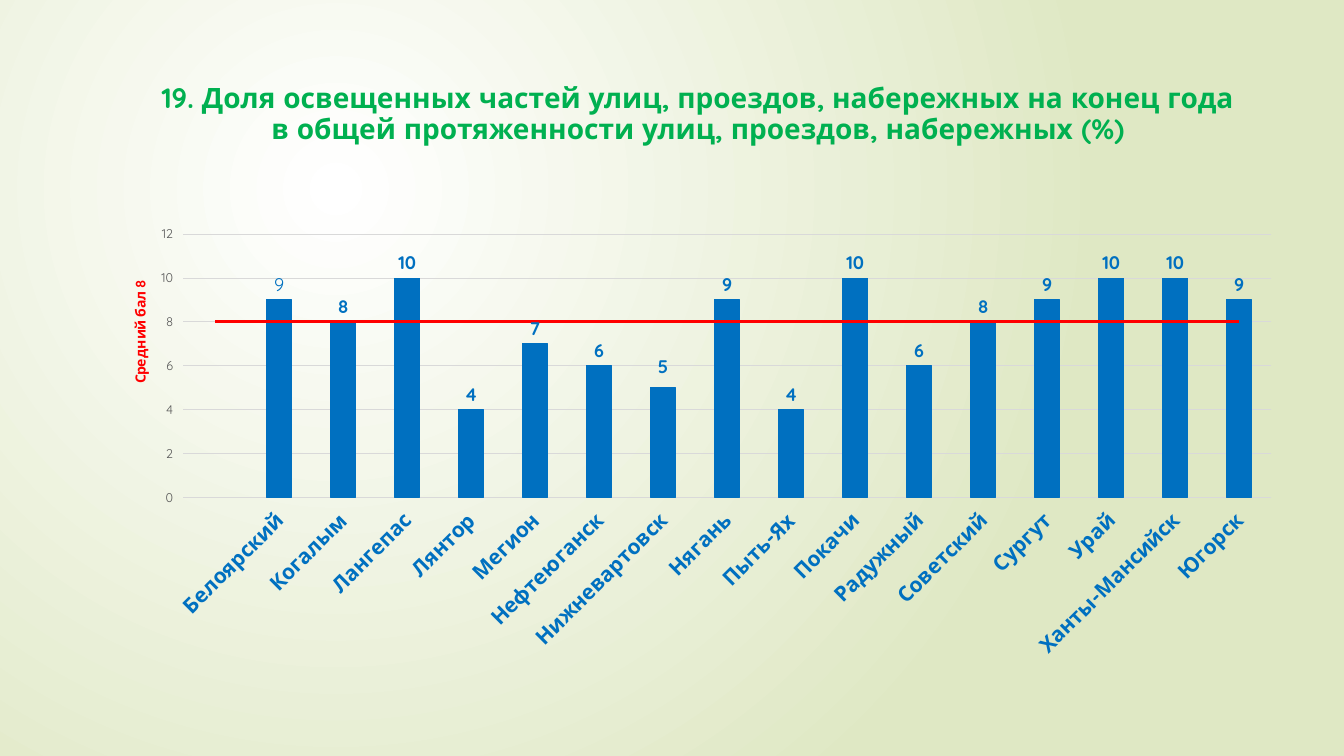
from lxml.etree import SubElement
from pptx import Presentation
from pptx.chart.data import CategoryChartData
from pptx.dml.color import RGBColor
from pptx.enum.chart import XL_CHART_TYPE as ChartType, XL_LABEL_POSITION as LabelPos
from pptx.enum.chart import XL_MARKER_STYLE as MarkerStyle
from pptx.enum.text import MSO_ANCHOR as Anchor, PP_ALIGN as Align
from pptx.oxml import parse_xml
from pptx.oxml.ns import nsdecls, qn
from pptx.util import Inches, Pt

WHITE = RGBColor(0xFF, 0xFF, 0xFF)
PALE_GREEN = RGBColor(0xDF, 0xE8, 0xC4)
GREEN = RGBColor(0x00, 0xB0, 0x50)
BLUE = RGBColor(0x00, 0x70, 0xC0)
RED = RGBColor(0xFF, 0x00, 0x00)
BLACK = RGBColor(0x00, 0x00, 0x00)
GREY = RGBColor(0x59, 0x59, 0x59)
GRID_GREY = RGBColor(0xD9, 0xD9, 0xD9)

TITLE = ["19. Доля освещенных частей улиц, проездов, набережных на конец года",
         "в общей протяженности улиц, проездов, набережных (%)"]
AVERAGE = 8
SCORES = {
    "": None, "Белоярский": 9, "Когалым": 8, "Лангепас": 10, "Лянтор": 4,
    "Мегион": 7, "Нефтеюганск": 6, "Нижневартовск": 5, "Нягань": 9,
    "Пыть-Ях": 4, "Покачи": 10, "Радужный": 6, "Советский": 8, "Сургут": 9,
    "Урай": 10, "Ханты-Мансийск": 10, "Югорск": 9,
}


def manual_layout(x, y, w=None, h=None):
    """Chart layout in fractions of the chart; with a size it is the inner plot."""
    layout = parse_xml(f"<c:layout {nsdecls('c')}><c:manualLayout/></c:layout>")
    settings = {"xMode": "edge", "yMode": "edge", "x": x, "y": y, "w": w, "h": h}
    if w:
        settings = {"layoutTarget": "inner", **settings}
    for tag, value in settings.items():
        if value is not None:
            SubElement(layout[0], qn(f"c:{tag}")).set("val", str(value))
    return layout


class ScoreSlide:
    face = "Quicksand"

    def __init__(self, slide):
        self.slide = slide

    def style(self, font, size, color, bold=False):
        font.name, font.size, font.bold = self.face, Pt(size), bold
        font.color.rgb = color

    def background(self, inner, outer):
        fill = self.slide.background.fill
        fill.gradient()
        for stop, color in zip(fill.gradient_stops, (inner, outer)):
            stop.color.rgb = color
        gradient = self.slide.element.find(f".//{qn('a:gradFill')}")
        circle = parse_xml(
            f'<a:path {nsdecls("a")} path="circle">'
            '<a:fillToRect l="50000" t="50000" r="100000" b="100000"/></a:path>')
        gradient.replace(gradient.find(qn("a:lin")), circle)

    def title(self, lines, left, top, width, height):
        box = self.slide.shapes.add_textbox(
            Inches(left), Inches(top), Inches(width), Inches(height))
        frame = box.text_frame
        frame.word_wrap, frame.vertical_anchor = True, Anchor.BOTTOM
        heading = frame.paragraphs[0]
        heading.alignment, heading.line_spacing = Align.CENTER, 0.9
        for number, line in enumerate(lines):
            if number:
                heading.add_line_break()
            run = heading.add_run()
            run.text = line
            self.style(run.font, 20, GREEN, True)

    def score_chart(self, scores, average, left, top, width, height):
        data = CategoryChartData()
        data.categories = list(scores)
        data.add_series("Series 1", list(scores.values()))
        data.add_series("Series 2", [average] * len(scores))
        chart = self.slide.shapes.add_chart(
            ChartType.COLUMN_CLUSTERED, Inches(left), Inches(top),
            Inches(width), Inches(height), data).chart
        chart.has_title = chart.has_legend = False
        self.style(chart.font, 10, BLACK)
        self.bars(chart.plots[0])
        self.axes(chart, f"Средний бал {average}")
        self.average_line(chart)
        plot_area = chart.plots[0]._element.getparent()
        for old in plot_area.findall(qn("c:layout")):
            plot_area.remove(old)
        plot_area.insert(0, manual_layout(0.063, 0.045, 0.924, 0.578))

    def bars(self, plot):
        plot.gap_width, plot.vary_by_categories = 150, False
        bars = plot.series[0]
        bars.format.fill.solid()
        bars.format.fill.fore_color.rgb = BLUE
        bars.format.line.color.rgb = BLUE
        bars.format.line.width = Pt(0.75)
        labels = bars.data_labels
        labels.show_value, labels.position = True, LabelPos.OUTSIDE_END
        self.style(labels.font, 13, BLUE, True)

        # The first label is typed by hand in a regular weight
        first = bars.points[1].data_label
        run = first.text_frame.paragraphs[0].add_run()
        run.text = "9"
        self.style(run.font, 13, BLUE)
        first.position = LabelPos.OUTSIDE_END

        # The label of Нижневартовск sits a little higher
        raised = bars.points[7].data_label
        self.style(raised.font, 13, BLUE, True)
        raised.position = LabelPos.OUTSIDE_END
        label = labels._element.find(f"{qn('c:dLbl')}/{qn('c:idx')}[@val='7']").getparent()
        layout = manual_layout(0, -0.013)
        for mode in ("c:xMode", "c:yMode"):
            layout[0].remove(layout[0].find(qn(mode)))
        label.insert(1, layout)

    def axes(self, chart, caption):
        cities, points = chart.category_axis, chart.value_axis
        self.style(cities.tick_labels.font, 15, BLUE, True)
        cities._element.find(f"{qn('c:txPr')}/{qn('a:bodyPr')}").set("rot", "-2700000")
        self.style(points.tick_labels.font, 9, GREY)
        for axis in (cities, points):
            axis.format.line.fill.background()
        points.minimum_scale, points.maximum_scale, points.major_unit = 0, 12, 2
        grid = points.major_gridlines.format.line
        grid.color.rgb, grid.width = GRID_GREY, Pt(0.75)

        axis_title = points.axis_title
        run = axis_title.text_frame.paragraphs[0].add_run()
        run.text = caption
        self.style(run.font, 10, RED, True)
        element = axis_title._element
        body = element.find(f".//{qn('a:bodyPr')}")
        body.set("rot", "-5400000")
        body.set("vert", "horz")
        for old in element.findall(qn("c:layout")):
            element.remove(old)
        element.find(qn("c:tx")).addnext(manual_layout(0.016, 0.14))

    def average_line(self, chart):
        """Move the second series from the bars to a line on the same axes."""
        bar_chart = chart.plots[0]._element
        series = bar_chart.findall(qn("c:ser"))[1]
        for bar_only in series.findall(qn("c:invertIfNegative")):
            series.remove(bar_only)
        line_chart = parse_xml(
            f'<c:lineChart {nsdecls("c")}><c:grouping val="standard"/>'
            '<c:varyColors val="0"/><c:marker val="1"/></c:lineChart>')
        line_chart.insert(2, series)
        for axis_id in bar_chart.findall(qn("c:axId")):
            SubElement(line_chart, qn("c:axId")).set("val", axis_id.get("val"))
        bar_chart.addnext(line_chart)
        average = chart.plots[1].series[0]
        average.smooth = False
        average.marker.style = MarkerStyle.NONE
        average.format.line.color.rgb = RED
        average.format.line.width = Pt(2.25)


def main():
    deck = Presentation()
    deck.slide_width, deck.slide_height = Inches(13.33), Inches(7.5)
    page = ScoreSlide(deck.slides.add_slide(deck.slide_layouts[6]))
    page.background(WHITE, PALE_GREEN)
    page.score_chart(SCORES, AVERAGE, 1.08, 2.12, 11.68, 4.52)
    page.title(TITLE, 1.19, 0.85, 11.46, 0.64)
    deck.save("out.pptx")


if __name__ == "__main__":
    main()
